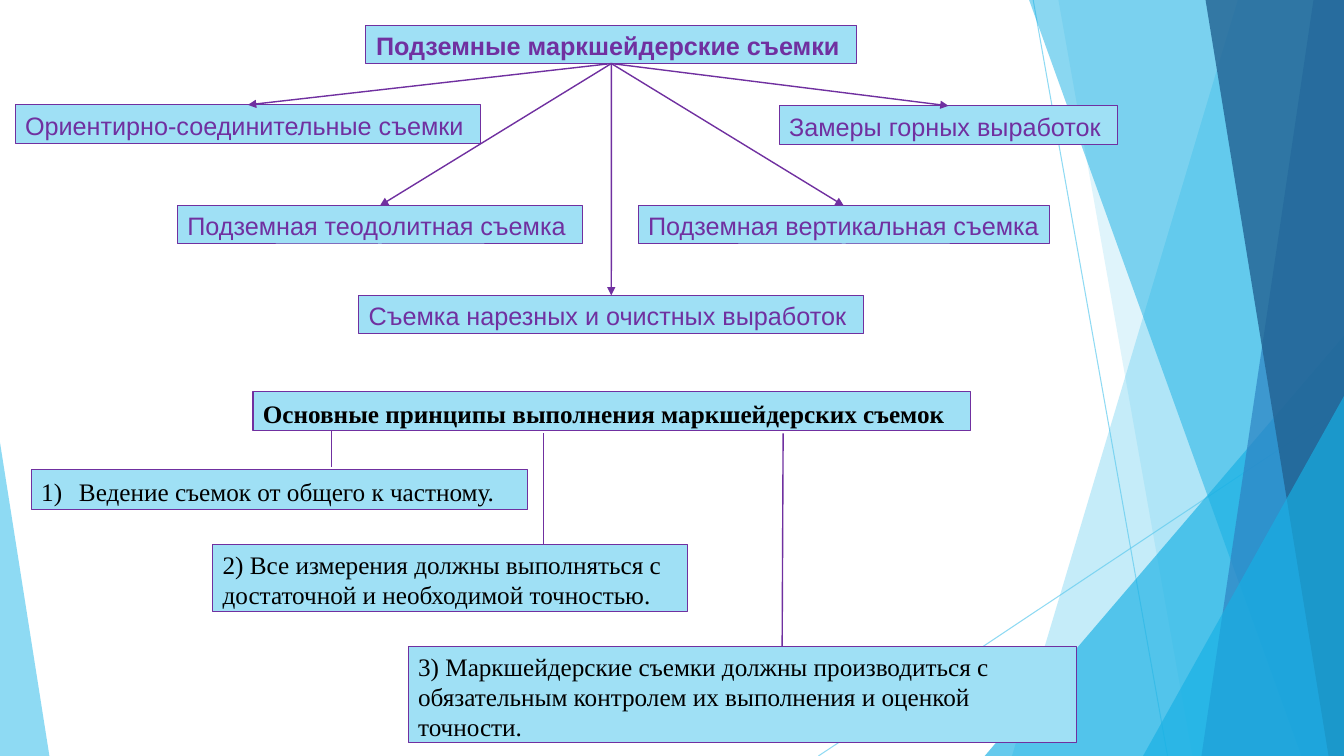
"""Build a slide on underground mine surveys and the principles of surveying."""
from lxml import etree
from pptx import Presentation
from pptx.dml.color import RGBColor
from pptx.enum.shapes import MSO_CONNECTOR as CONN, MSO_SHAPE as SHAPE
from pptx.enum.text import MSO_ANCHOR as ANCHOR, MSO_AUTO_SIZE as AUTO, PP_ALIGN as ALIGN
from pptx.oxml.ns import qn
from pptx.util import Pt

PURPLE = RGBColor(0x70, 0x30, 0xA0)
BLACK = RGBColor(0x00, 0x00, 0x00)
PALE = RGBColor(0x9F, 0xE0, 0xF5)
SKY = RGBColor(0x5F, 0xCB, 0xEF)
CYAN = RGBColor(0x17, 0xB0, 0xE4)
BLUE = RGBColor(0x2E, 0x83, 0xC3)
NAVY = RGBColor(0x22, 0x62, 0x92)
SANS, SERIF = "Arial", "Times New Roman"
WIDTH, HEIGHT = 960, 540


class Board:
    def __init__(self, slide):
        self.slide = slide
        self.shapes = slide.shapes

    def set_alpha(self, fill, percent):
        color = fill._xPr.find(".//" + qn("a:srgbClr"))
        etree.SubElement(color, qn("a:alpha")).set("val", str(percent * 1000))

    def paint(self, sp, color, alpha):
        sp.shadow.inherit = False
        sp.fill.solid()
        sp.fill.fore_color.rgb = color
        self.set_alpha(sp.fill, alpha)
        sp.line.fill.background()

    def band(self, top_x, bottom_x, color, alpha):
        fb = self.shapes.build_freeform(Pt(top_x), 0)
        corners = [(WIDTH, 0), (WIDTH, HEIGHT), (bottom_x, HEIGHT)]
        fb.add_line_segments([(Pt(x), Pt(y)) for x, y in corners], close=True)
        self.paint(fb.convert_to_shape(), color, alpha)

    def triangle(self, x, y, w, apex, color, alpha):
        sp = self.shapes.add_shape(SHAPE.ISOSCELES_TRIANGLE, Pt(x), Pt(y), Pt(w), Pt(HEIGHT - y))
        sp.adjustments[0] = apex
        self.paint(sp, color, alpha)

    def line(self, x1, y1, x2, y2, color=PURPLE, width=1.0, alpha=100):
        cn = self.shapes.add_connector(CONN.STRAIGHT, Pt(x1), Pt(y1), Pt(x2), Pt(y2))
        cn.line.color.rgb = color
        cn.line.width = Pt(width)
        if alpha < 100:
            self.set_alpha(cn.line.fill, alpha)
        etree.SubElement(cn._element.spPr, qn("a:effectLst"))
        return cn

    def arrow(self, source, target):
        cn = self.line(0, 0, 0, 0)
        cn.begin_connect(source, 2)
        cn.end_connect(target, 0)
        etree.SubElement(cn.line._get_or_add_ln(), qn("a:tailEnd")).set("type", "triangle")

    def box(self, text, x, y, w, h, font=SANS, color=PURPLE, bold=False, one_line=True,
            align=ALIGN.LEFT, spacing=None, numbered=False, title=False):
        if title:
            sp = self.shapes.title
            sp.left, sp.top, sp.width, sp.height = Pt(x), Pt(y), Pt(w), Pt(h)
        else:
            sp = self.shapes.add_shape(SHAPE.RECTANGLE, Pt(x), Pt(y), Pt(w), Pt(h))
            sp.shadow.inherit = False
        sp.fill.solid()
        sp.fill.fore_color.rgb = PALE
        sp.line.color.rgb = PURPLE
        sp.line.width = Pt(0.75)
        tf = sp.text_frame
        tf.text = text
        tf.word_wrap = True
        tf.auto_size = AUTO.NONE
        tf.vertical_anchor = ANCHOR.TOP
        if one_line:
            tf.margin_right = 0
        p = tf.paragraphs[0]
        if numbered:
            pPr = p._p.get_or_add_pPr()
            pPr.set("marL", str(Pt(27)))
            pPr.set("indent", str(-Pt(27)))
            etree.SubElement(pPr, qn("a:buFont")).set("typeface", font)
            etree.SubElement(pPr, qn("a:buAutoNum")).set("type", "arabicParenR")
        p.alignment = align
        if spacing:
            p.line_spacing = spacing
        f = p.runs[0].font
        f.name, f.size, f.bold = font, Pt(18), bold
        f.color.rgb = color
        return sp


def draw_backdrop(board):
    board.line(738, 0, 834, HEIGHT, SKY, 0.75, 70)
    board.line(WIDTH, 290.2, 584.6, HEIGHT, SKY, 0.75, 70)
    board.band(884.2, 722.9, SKY, 36)
    board.band(756, 851.8, SKY, 20)
    board.triangle(703.4, 239.8, 256.6, 1, CYAN, 66)
    board.band(735.1, 929.5, CYAN, 50)
    board.band(938.2, 858.2, BLUE, 70)
    board.band(861.1, 949, NAVY, 80)
    board.triangle(816.5, 283, 143.5, 1, CYAN, 66)
    board.triangle(0, 316.1, 35.3, 0, SKY, 70)


def draw_surveys(board):
    root = board.box("Подземные маркшейдерские съемки", 261.4, 18, 350.6, 27.4,
                     bold=True, title=True)
    surveys = [
        ("Ориентирно-соединительные съемки", 10.8, 74.9, 332.6),
        ("Подземная теодолитная съемка", 126.7, 146.9, 289.4),
        ("Подземная вертикальная съемка", 455.8, 146.9, 293.8),
        ("Съемка нарезных и очистных выработок", 256.3, 211, 360.7),
        ("Замеры горных выработок", 556.6, 75.6, 241.9),
    ]
    boxes = [board.box(text, x, y, w, 27.4) for text, x, y, w in surveys]
    for sp in boxes:
        board.arrow(root, sp)


def draw_principles(board):
    style = dict(font=SERIF, color=BLACK)
    board.box("Ведение съемок от общего к частному.", 22.3, 335.5, 354.2, 28.8,
              spacing=1.07, numbered=True, **style)
    board.box("2) Все измерения должны выполняться с достаточной и необходимой точностью.",
              151.9, 388.8, 339.1, 48.2, one_line=False, **style)
    board.box("3) Маркшейдерские съемки должны производиться с обязательным контролем "
              "их выполнения и оценкой точности.",
              291.6, 461.5, 477.4, 69.1, one_line=False, **style)
    board.line(388.1, 309.6, 388.1, 388.8)
    board.line(559.4, 309.6, 558.7, 461.5)
    board.box("Основные принципы выполнения маркшейдерских съемок", 180.7, 279.4, 512.6, 28.1,
              bold=True, align=ALIGN.JUSTIFY, spacing=1.07, **style)
    board.line(236.9, 307.4, 236.9, 333.4)


def main():
    prs = Presentation()
    prs.slide_width, prs.slide_height = Pt(WIDTH), Pt(HEIGHT)
    board = Board(prs.slides.add_slide(prs.slide_layouts[5]))
    draw_backdrop(board)
    draw_surveys(board)
    draw_principles(board)
    prs.save("out.pptx")


if __name__ == "__main__":
    main()
